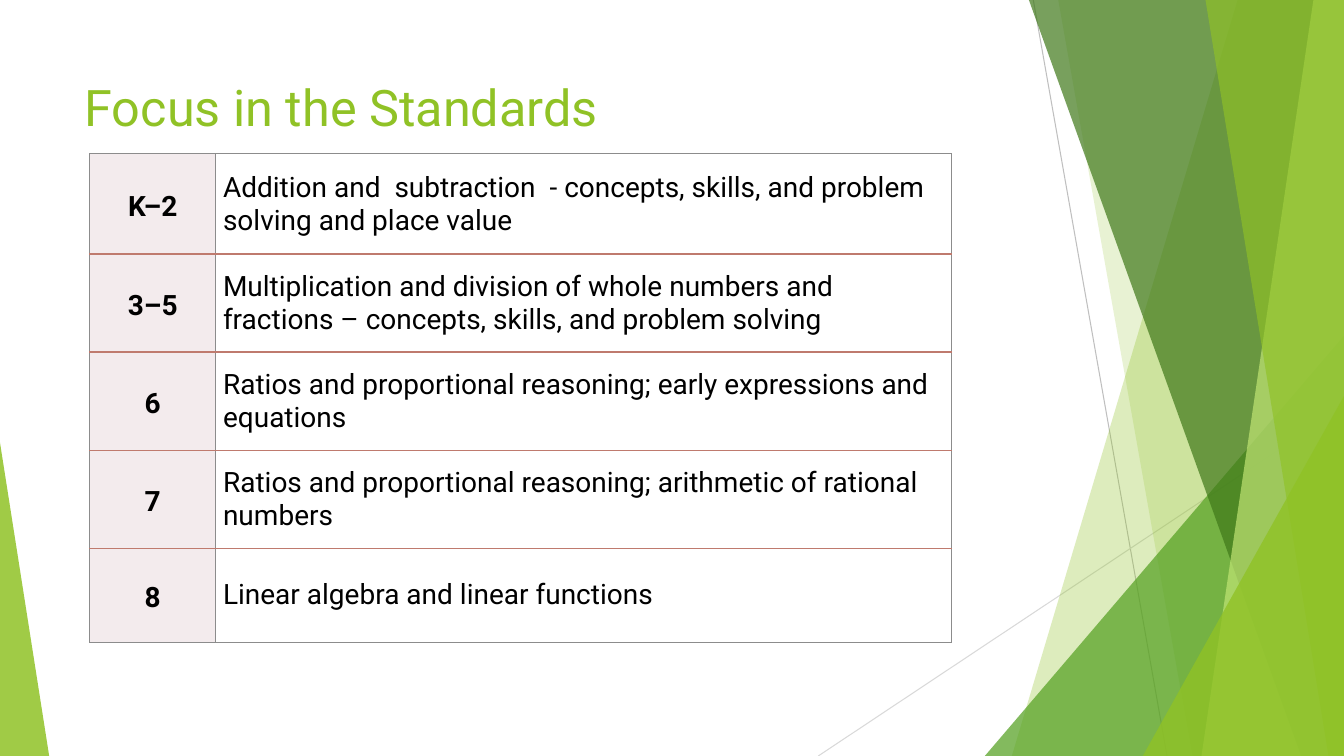
from dataclasses import dataclass

from lxml import etree
from pptx import Presentation
from pptx.dml.color import RGBColor
from pptx.enum import shapes, text
from pptx.oxml import ns
from pptx.util import Cm, Pt

LIME = RGBColor(0x90, 0xC2, 0x26)
GREEN = RGBColor(0x54, 0xA0, 0x21)
FOREST = RGBColor(0x3F, 0x78, 0x19)
PALE_LIME = RGBColor(0xC0, 0xE4, 0x74)
SILVER = RGBColor(0xBF, 0xBF, 0xBF)
LIGHT_GRAY = RGBColor(0xD9, 0xD9, 0xD9)
FRAME_GRAY = RGBColor(0x8C, 0x8C, 0x8C)
RULE_RED = RGBColor(0xBF, 0x7A, 0x6E)
BLUSH = RGBColor(0xF3, 0xEB, 0xED)
BLACK = RGBColor(0, 0, 0)
FONT = "Roboto"
WIDTH, HEIGHT = 33.87, 19.05


@dataclass
class Ray:
    start: tuple[float, float]
    end: tuple[float, float]
    color: RGBColor


@dataclass
class Band:
    top_x: float
    bottom_x: float
    color: RGBColor
    opacity: int


@dataclass
class Corner:
    left: float
    top: float
    width: float
    apex: float
    color: RGBColor
    opacity: int


@dataclass
class Standard:
    grade: str
    focus: str
    height: float


RAYS = [
    Ray((26.04, 0), (29.41, HEIGHT), SILVER),
    Ray((WIDTH, 10.24), (20.62, HEIGHT), LIGHT_GRAY),
]
FACETS = [
    Band(31.19, 25.5, LIME, 30),
    Band(26.67, 30.05, LIME, 20),
    Corner(24.82, 8.46, 9.05, 1, GREEN, 72),
    Band(25.93, 32.79, FOREST, 70),
    Band(33.1, 30.28, PALE_LIME, 70),
    Band(30.38, 33.48, LIME, 65),
    Corner(28.8, 9.98, 5.07, 1, LIME, 80),
    Corner(0, 11.15, 1.24, 0, LIME, 85),
]
STANDARDS = [
    Standard("K–2", "Addition and  subtraction  - concepts, skills, and problem solving and place value", 2.54),
    Standard("3–5", "Multiplication and division of whole numbers and fractions – concepts, skills, and problem solving", 2.47),
    Standard("6", "Ratios and proportional reasoning; early expressions and equations", 2.47),
    Standard("7", "Ratios and proportional reasoning; arithmetic of rational numbers", 2.47),
    Standard("8", "Linear algebra and linear functions", 2.36),
]


def draw_ray(page, ray: Ray) -> None:
    line = page.shapes.add_connector(
        shapes.MSO_CONNECTOR.STRAIGHT, *map(Cm, ray.start + ray.end))
    line.line.color.rgb = ray.color
    line.line.width = Pt(0.75)
    etree.SubElement(line._element.spPr, ns.qn("a:effectLst"))


def draw_facet(page, facet: Band | Corner) -> None:
    if isinstance(facet, Band):
        builder = page.shapes.build_freeform(Cm(facet.top_x), 0)
        builder.add_line_segments([
            (Cm(WIDTH), 0), (Cm(WIDTH), Cm(HEIGHT)), (Cm(facet.bottom_x), Cm(HEIGHT))])
        shape = builder.convert_to_shape()
    else:
        shape = page.shapes.add_shape(
            shapes.MSO_SHAPE.ISOSCELES_TRIANGLE, Cm(facet.left), Cm(facet.top),
            Cm(facet.width), Cm(HEIGHT - facet.top))
        shape.adjustments[0] = facet.apex
    shape.shadow.inherit = False
    shape.line.fill.background()
    shape.fill.solid()
    shape.fill.fore_color.rgb = facet.color
    color = shape._element.spPr.find(ns.qn("a:solidFill"))[0]
    etree.SubElement(color, ns.qn("a:alpha"), val=str(facet.opacity * 1000))


def format_title(page) -> None:
    title = page.shapes.title
    title.left, title.top, title.width, title.height = map(Cm, (1.88, 1.7, 23.88, 2.16))
    frame = title.text_frame
    frame.text = "Focus in the Standards"
    frame.vertical_anchor = text.MSO_ANCHOR.TOP
    frame.margin_top = Cm(0.22)
    para = frame.paragraphs[0]
    para.alignment = text.PP_ALIGN.LEFT
    para.line_spacing = 1.0
    para.font.name = FONT
    para.font.size = Pt(36)
    para.font.color.rgb = LIME


def set_border(cell, side: str, color: RGBColor, points: float) -> None:
    line = etree.Element(ns.qn(f"a:{side}"), w=str(Pt(points)))
    fill = etree.SubElement(line, ns.qn("a:solidFill"))
    etree.SubElement(fill, ns.qn("a:srgbClr"), val=str(color))
    properties = cell._tc.get_or_add_tcPr()
    properties.insert(len(properties.findall("*")) - 1, line)


def fill_cell(cell, words: str, is_grade: bool) -> None:
    cell.text = words
    cell.vertical_anchor = text.MSO_ANCHOR.MIDDLE
    cell.margin_left = cell.margin_right = Cm(0.18)
    cell.margin_top = cell.margin_bottom = 0
    para = cell.text_frame.paragraphs[0]
    para.font.name = FONT
    para.font.size = Pt(20)
    para.font.bold = is_grade
    para.font.color.rgb = BLACK
    if is_grade:
        para.alignment = text.PP_ALIGN.CENTER
        para.line_spacing = 1.15
        cell.fill.solid()
        cell.fill.fore_color.rgb = BLUSH
    else:
        cell.fill.background()


def add_standards_table(page) -> None:
    total = sum(standard.height for standard in STANDARDS)
    table = page.shapes.add_table(
        len(STANDARDS), 2, Cm(2.26), Cm(3.87), Cm(21.72), Cm(total)).table
    table.first_row = table.horz_banding = False
    table.columns[0].width, table.columns[1].width = Cm(3.18), Cm(18.54)
    last = len(STANDARDS) - 1
    for row, standard in enumerate(STANDARDS):
        table.rows[row].height = Cm(standard.height)
        for column, words in enumerate((standard.grade, standard.focus)):
            cell = table.cell(row, column)
            fill_cell(cell, words, column == 0)
            for side, inner in (("lnL", False), ("lnR", False),
                                ("lnT", row > 0), ("lnB", row < last)):
                color, points = (RULE_RED, 1.5) if inner else (FRAME_GRAY, 0.75)
                set_border(cell, side, color, points)


def main() -> None:
    deck = Presentation()
    deck.slide_width, deck.slide_height = Cm(WIDTH), Cm(HEIGHT)
    page = deck.slides.add_slide(deck.slide_layouts[5])
    for ray in RAYS:
        draw_ray(page, ray)
    for facet in FACETS:
        draw_facet(page, facet)
    format_title(page)
    add_standards_table(page)
    deck.save("out.pptx")


if __name__ == "__main__":
    main()
